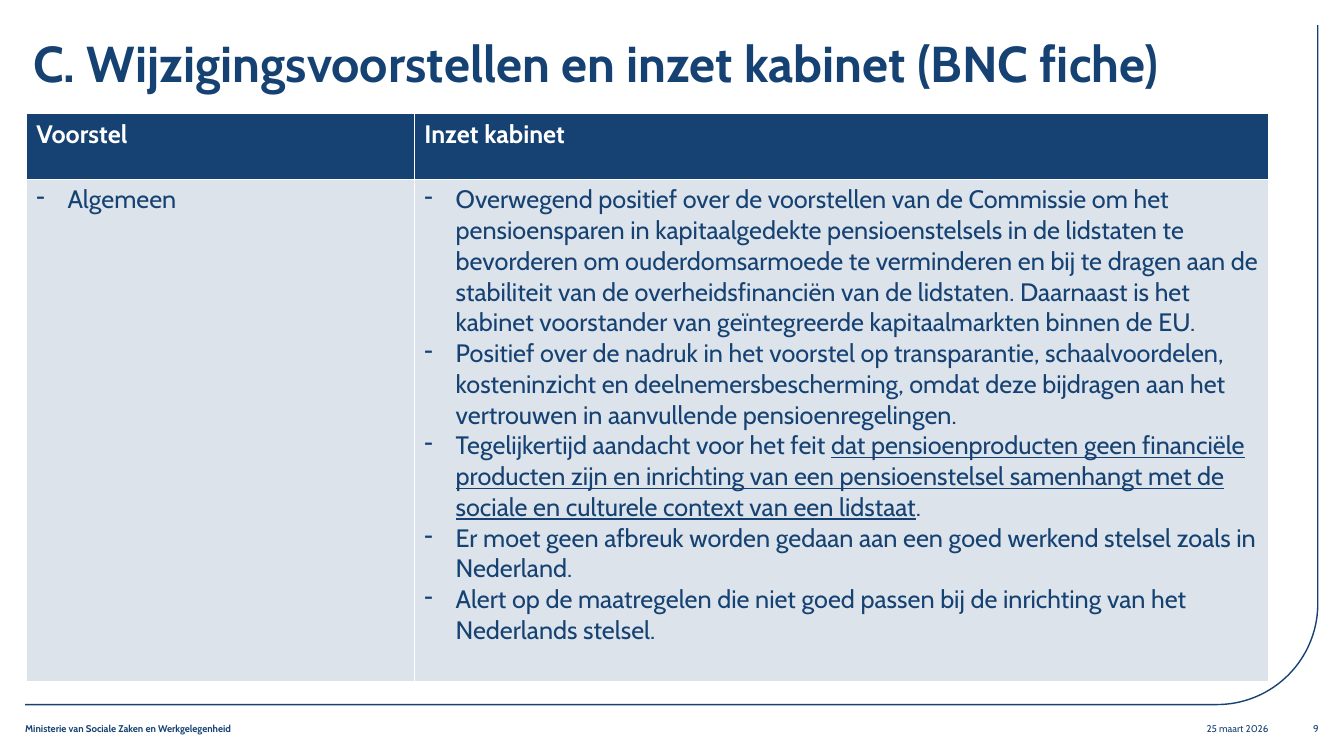
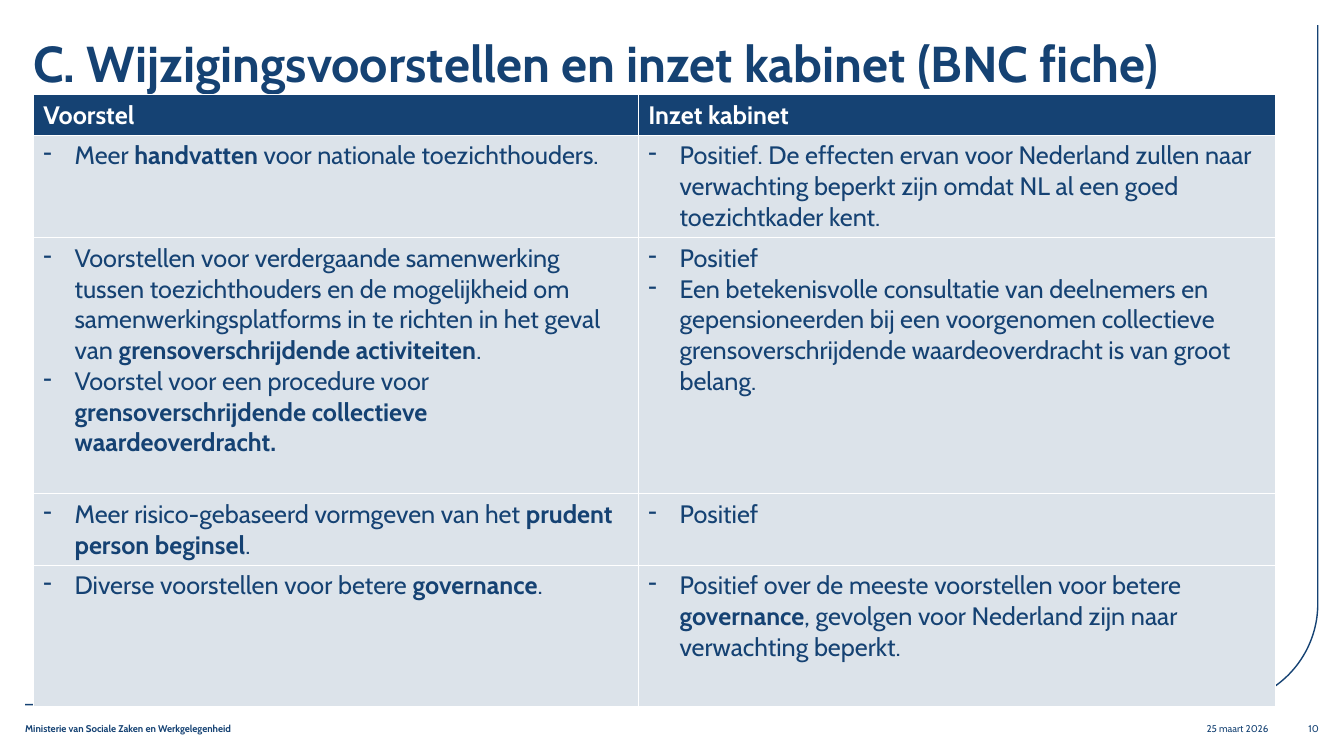
import math

import pptx
import pptx.util
import pptx.dml.color
import pptx.enum.text
import pptx.oxml.ns
from lxml import etree

Inches = pptx.util.Inches
Pt = pptx.util.Pt
qn = pptx.oxml.ns.qn

COLOURS = {"navy": "154273", "pale": "DCE3EA", "white": "FFFFFF"}
FONT = "Cabin"
TITLE = "C. Wijzigingsvoorstellen en inzet kabinet (BNC fiche)"
MINISTRY = "Ministerie van Sociale Zaken en Werkgelegenheid"
DATE = "25 maart 2026"
HEADINGS = ["Voorstel", "Inzet kabinet"]


def colour(name):
    return pptx.dml.color.RGBColor.from_string(COLOURS[name])


class Presenter:
    """Holds the style and the current slide."""

    def __init__(self):
        self.deck = pptx.Presentation()
        self.deck.slide_width = Inches(13.33)
        self.deck.slide_height = Inches(7.5)
        self.page = None

    def add_page(self, number):
        self.page = self.deck.slides.add_slide(self.deck.slide_layouts[6])
        self.frame_line()
        self.text(MINISTRY, 0.25, 7.17, 3.19, 0.28, 7, bold=True)
        self.text(TITLE, 0.33, 0.4, 11.83, 0.99, 36, bold=True, spacing=0.87)
        self.text(DATE, 11.75, 7.17, 0.83, 0.28, 7, right=True)
        self.text(str(number), 12.65, 7.17, 0.43, 0.28, 7, right=True)

    def style(self, para, size, bold, tone="navy"):
        para.font.name = FONT
        para.font.size = Pt(size)
        para.font.bold = bold
        para.font.color.rgb = colour(tone)

    def text(self, words, left, top, width, height, size, bold=False,
             right=False, spacing=None):
        box = self.page.shapes.add_textbox(
            Inches(left), Inches(top), Inches(width), Inches(height))
        frame = box.text_frame
        frame.word_wrap = True
        frame.margin_left = frame.margin_right = 0
        frame.margin_top = frame.margin_bottom = 0
        para = frame.paragraphs[0]
        para.text = words
        if right:
            para.alignment = pptx.enum.text.PP_ALIGN.RIGHT
        if spacing:
            para.line_spacing = spacing
        self.style(para, size, bold)

    def frame_line(self):
        """Bottom and right edge line, joined by a quarter circle."""
        centre_x, centre_y, radius, steps = 12.07, 5.99, 1.0, 48
        angles = [math.pi / 2 * (1 - i / steps) for i in range(steps + 1)]
        arc = [(centre_x + radius * math.cos(a), centre_y + radius * math.sin(a))
               for a in angles]
        points = [(Inches(x), Inches(y)) for x, y in arc + [(13.07, 0.25)]]
        builder = self.page.shapes.build_freeform(Inches(0.25), Inches(6.99))
        builder.add_line_segments(points, close=False)
        line = builder.convert_to_shape()
        line.shadow.inherit = False
        line.fill.background()
        line.line.color.rgb = colour("navy")
        line.line.width = Pt(1)

    def cell_look(self, cell, tone):
        cell.fill.solid()
        cell.fill.fore_color.rgb = colour(tone)
        # White borders come before the fill in the cell properties
        properties = cell._tc.get_or_add_tcPr()
        for index, side in enumerate(("a:lnL", "a:lnR", "a:lnT", "a:lnB")):
            border = etree.Element(qn(side), w=str(Pt(0.75)))
            fill = etree.SubElement(border, qn("a:solidFill"))
            etree.SubElement(fill, qn("a:srgbClr"), val=COLOURS["white"])
            properties.insert(index, border)

    def bullet(self, para, words, emphasis):
        """Words between bars get the emphasis (bold or underline)."""
        properties = para._p.get_or_add_pPr()
        properties.set("marL", str(Inches(0.31)))
        properties.set("indent", str(-Inches(0.31)))
        etree.SubElement(properties, qn("a:buChar"), char="-")
        self.style(para, 18, False)
        for index, part in enumerate(words.split("|")):
            if part:
                span = para.add_run()
                span.text = part
                if index % 2:
                    setattr(span.font, emphasis, True)

    def table(self, left, top, widths, heights, rows, emphasis="bold"):
        grid = self.page.shapes.add_table(
            len(heights), len(widths), Inches(left), Inches(top),
            Inches(sum(widths)), Inches(sum(heights))).table
        for column, width in zip(grid.columns, widths):
            column.width = Inches(width)
        for row, height in zip(grid.rows, heights):
            row.height = Inches(height)
        # Heading row
        for column, heading in enumerate(HEADINGS):
            cell = grid.cell(0, column)
            self.cell_look(cell, "navy")
            para = cell.text_frame.paragraphs[0]
            para.text = heading
            self.style(para, 18, True, "white")
        # Bulleted rows
        for number, row in enumerate(rows, 1):
            for column, items in enumerate(row):
                cell = grid.cell(number, column)
                self.cell_look(cell, "pale")
                frame = cell.text_frame
                for index, words in enumerate(items):
                    para = frame.add_paragraph() if index else frame.paragraphs[0]
                    self.bullet(para, words, emphasis)


GENERAL = [
    (["Algemeen"], [
        "Overwegend positief over de voorstellen van de Commissie om het "
        "pensioensparen in kapitaalgedekte pensioenstelsels in de lidstaten te "
        "bevorderen om ouderdomsarmoede te verminderen en bij te dragen aan de "
        "stabiliteit van de overheidsfinanciën van de lidstaten. Daarnaast is het "
        "kabinet voorstander van geïntegreerde kapitaalmarkten binnen de EU.",
        "Positief over de nadruk in het voorstel op transparantie, schaalvoordelen, "
        "kosteninzicht en deelnemersbescherming, omdat deze bijdragen aan het "
        "vertrouwen in aanvullende pensioenregelingen.",
        "Tegelijkertijd aandacht voor het feit |dat pensioenproducten geen "
        "financiële producten zijn en inrichting van een pensioenstelsel samenhangt "
        "met de sociale en culturele context van een lidstaat|.",
        "Er moet geen afbreuk worden gedaan aan een goed werkend stelsel zoals in "
        "Nederland.",
        "Alert op de maatregelen die niet goed passen bij de inrichting van het "
        "Nederlands stelsel.",
    ]),
]

PROPOSALS = [
    (["Meer| handvatten |voor nationale toezichthouders."],
     ["Positief. De effecten ervan voor Nederland zullen naar verwachting beperkt "
      "zijn omdat NL al een goed toezichtkader kent."]),
    (["Voorstellen voor verdergaande samenwerking tussen toezichthouders en de "
      "mogelijkheid om samenwerkingsplatforms in te richten in het geval van "
      "|grensoverschrijdende activiteiten|.",
      "Voorstel voor een procedure voor "
      "|grensoverschrijdende collectieve waardeoverdracht.|"],
     ["Positief",
      "Een betekenisvolle consultatie van deelnemers en gepensioneerden bij een "
      "voorgenomen collectieve grensoverschrijdende waardeoverdracht is van groot "
      "belang."]),
    (["Meer risico-gebaseerd vormgeven van het |prudent person beginsel|."],
     ["Positief"]),
    (["Diverse voorstellen voor betere |governance|."],
     ["Positief over de meeste voorstellen voor betere |governance|, gevolgen voor "
      "Nederland zijn naar verwachting beperkt."]),
]


def main():
    show = Presenter()

    # General position
    show.add_page(9)
    show.table(0.26, 1.13, [3.85, 8.47], [0.65, 4.98], GENERAL, "underline")

    # Position per proposal
    show.add_page(10)
    show.table(0.33, 0.94, [6, 6.32], [0.4, 1.02, 2.54, 0.71, 1.4], PROPOSALS)

    show.deck.save("out.pptx")


if __name__ == "__main__":
    main()
